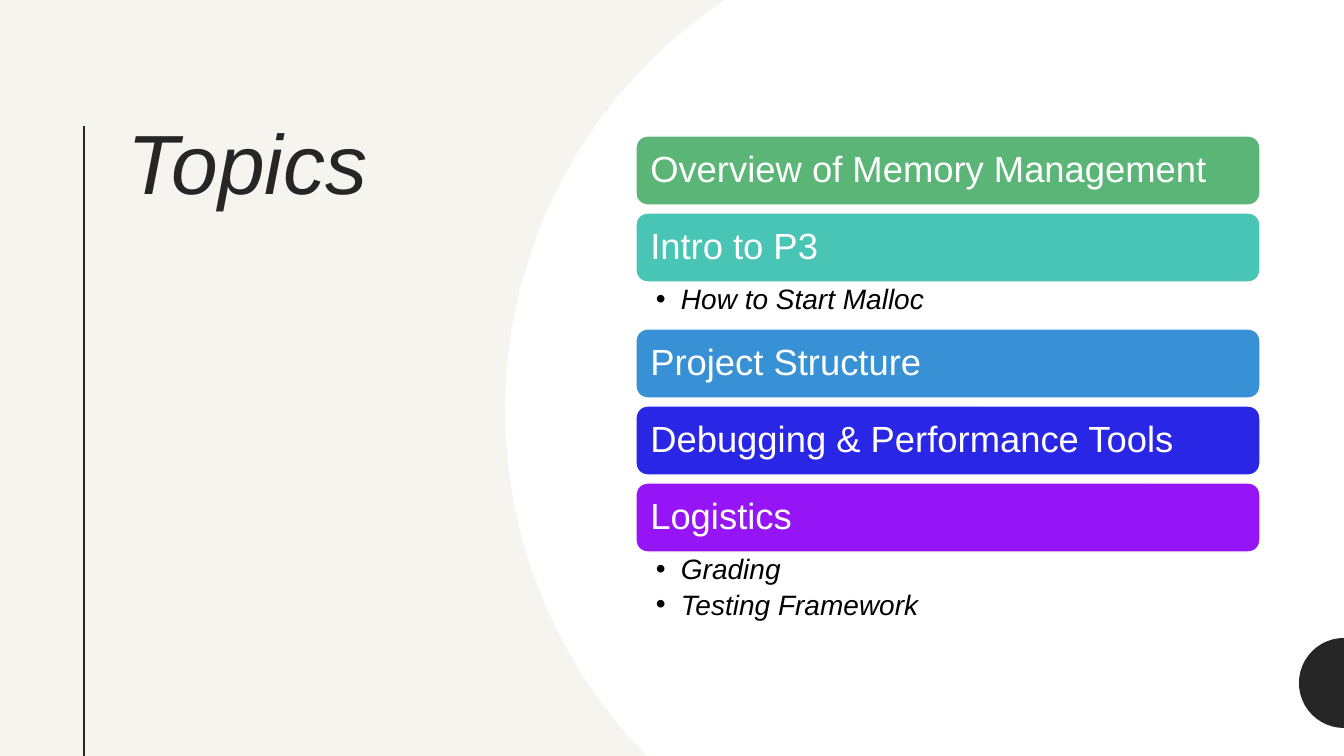
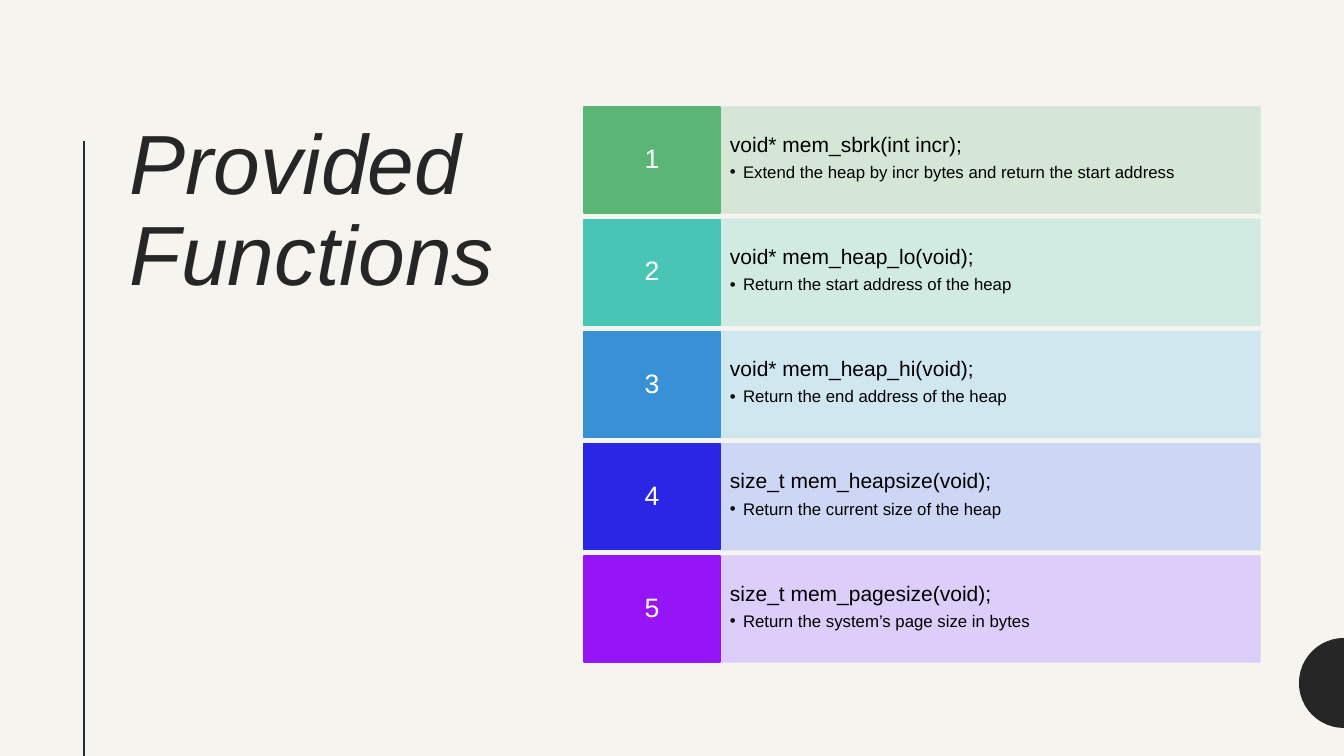
from math import asin, cos, sin

from lxml.etree import SubElement
from pptx import Presentation
from pptx.dml.color import RGBColor
from pptx.enum.shapes import MSO_CONNECTOR, MSO_SHAPE
from pptx.enum.text import MSO_ANCHOR, PP_ALIGN
from pptx.oxml.ns import qn
from pptx.util import Pt

SCALE = 914400 / 100.8
WIDE, HIGH = 1344, 756
FONT = "Arial"
HEX = {
    "paper": "F6F4EF", "white": "FFFFFF", "black": "000000",
    "ink": "262626", "navy": "232C41",
    "green": "5BB576", "teal": "49C5B5", "blue": "3890D5",
    "royal": "2926E6", "purple": "9615F6",
    "green pale": "D1E5D5", "teal pale": "CDEBE2", "blue pale": "CCE6F0",
    "royal pale": "CAD3F6", "purple pale": "D9CAFB",
}
HUES = ["green", "teal", "blue", "royal", "purple"]

TOPICS = [
    ("Overview of Memory Management", []),
    ("Intro to P3", ["How to Start Malloc"]),
    ("Project Structure", []),
    ("Debugging & Performance Tools", []),
    ("Logistics", ["Grading", "Testing Framework"]),
]
CALLS = [
    ("void* mem_sbrk(int incr);",
     "Extend the heap by incr bytes and return the start address"),
    ("void* mem_heap_lo(void);", "Return the start address of the heap"),
    ("void* mem_heap_hi(void);", "Return the end address of the heap"),
    ("size_t mem_heapsize(void);", "Return the current size of the heap"),
    ("size_t mem_pagesize(void);", "Return the system’s page size in bytes"),
]


def px(num):
    return round(num * SCALE)


def rgb(name):
    return RGBColor.from_string(HEX[name])


def paint(shape, fill, line=None):
    shape.shadow.inherit = False
    shape.fill.solid()
    shape.fill.fore_color.rgb = rgb(fill)
    if line:
        shape.line.color.rgb = rgb(line)
        shape.line.width = Pt(1)
    else:
        shape.line.fill.background()


def block(slide, box, fill, line, kind=MSO_SHAPE.RECTANGLE):
    shape = slide.shapes.add_shape(kind, *map(px, box))
    paint(shape, fill, line)
    return shape


def label(slide, box):
    return slide.shapes.add_textbox(*map(px, box))


def frame(shape, side, edge, anchor=MSO_ANCHOR.TOP):
    """Set wrap, insets and anchor; return the text frame."""
    text = shape.text_frame
    text.word_wrap = True
    text.margin_left = text.margin_right = px(side)
    text.margin_top = text.margin_bottom = px(edge)
    text.vertical_anchor = anchor
    return text


def style(para, size, tint, slant=False, align=PP_ALIGN.LEFT):
    para.alignment = align
    para.line_spacing = 0.9
    for run in para.runs:
        font = run.font
        font.name, font.size, font.italic = FONT, Pt(size), slant
        font.color.rgb = rgb(tint)


def bullet(para, indent, before=0):
    para.space_before = Pt(before)
    props = para._p.get_or_add_pPr()
    props.set("marL", str(px(indent)))
    props.set("indent", str(-px(indent)))
    tint = SubElement(props, qn("a:buClr"))
    SubElement(tint, qn("a:srgbClr")).set("val", HEX["black"])
    SubElement(props, qn("a:buFont")).set("typeface", FONT)
    SubElement(props, qn("a:buChar")).set("char", "•")


def fade(shape, percent):
    for tint in shape._element.spPr.iter(qn("a:srgbClr")):
        SubElement(tint, qn("a:alpha")).set("val", str(percent * 1000))


def dome(slide, mid_x, mid_y, radius, top, base, fill):
    """Draw a disc's left arc from top to base, filled to the slide's right edge."""
    start, end = (asin((y - mid_y) / radius) for y in (top, base))
    steps = 24
    turns = [start + (end - start) * i / steps for i in range(steps + 1)]
    dots = [(px(mid_x - radius * cos(t)), px(mid_y + radius * sin(t))) for t in turns]
    if mid_x < WIDE:
        dots += [(px(WIDE), px(base)), (px(WIDE), px(top))]
    path = slide.shapes.build_freeform(*dots[0], scale=1.0)
    path.add_line_segments(dots[1:], close=True)
    paint(path.convert_to_shape(), fill)


def rule(slide, top, tint):
    line = slide.shapes.add_connector(
        MSO_CONNECTOR.STRAIGHT, px(84), px(top), px(84), px(HIGH))
    line.line.color.rgb = rgb(tint)
    line.line.width = Pt(1.5)
    SubElement(line._element.spPr, qn("a:effectLst"))


def base(deck, title, left, width, top, tint, bulge=False):
    """Add a slide with the shared ground, title, rule and edge disc."""
    slide = deck.slides.add_slide(deck.slide_layouts[6])
    slide.background.fill.solid()
    slide.background.fill.fore_color.rgb = rgb("paper")
    text = frame(label(slide, (left, 117, width, 530)), 10, 5)
    text.text = title
    style(text.paragraphs[0], 60, "ink", slant=True)
    rule(slide, top, tint)
    if bulge:
        dome(slide, 997, 410, 492, 0, HIGH, "white")
    dome(slide, WIDE, 683, 45, 638, 728, "ink")
    return slide


def topics(slide, left, top, width):
    high, gap = 69, 8
    for hue, (head, subs) in zip(HUES, TOPICS):
        bar = block(slide, (left, top, width, high), hue, "white",
                    MSO_SHAPE.ROUNDED_RECTANGLE)
        text = frame(bar, 11, 11, MSO_ANCHOR.MIDDLE)
        text.text = head
        style(text.paragraphs[0], 26, "white")
        top += high
        if not subs:
            top += gap
            continue
        depth = 19 + 28 * len(subs)
        text = frame(label(slide, (left, top, width, depth)), 20, 3)
        text.text = "\n".join(subs)
        for i, para in enumerate(text.paragraphs):
            style(para, 20, "black", slant=True)
            bullet(para, 25, 4 if i else 0)
        top += depth


def calls(slide, left, top, width, depth):
    high, key = 106, 136
    pitch = (depth - high) / (len(CALLS) - 1)
    for i, (hue, (head, note)) in enumerate(zip(HUES, CALLS)):
        y = top + i * pitch
        pale = hue + " pale"
        body = block(slide, (left + key, y, width - key, high), pale, pale)
        fade(body, 89)
        text = frame(body, 10, 27)
        text.text = head + "\n" + note
        first, second = text.paragraphs
        style(first, 15, "black")
        style(second, 12, "black")
        bullet(second, 13, 5.2)

        tile = block(slide, (left, y, key, high), hue, hue)
        text = frame(tile, 7, 10, MSO_ANCHOR.MIDDLE)
        text.text = str(i + 1)
        style(text.paragraphs[0], 19, "white", align=PP_ALIGN.CENTER)


def main():
    deck = Presentation()
    deck.slide_width, deck.slide_height = px(WIDE), px(HIGH)

    slide = base(deck, "Topics", 118, 344, 126, "ink", bulge=True)
    topics(slide, 636, 136, 624)

    slide = base(deck, "Provided Functions", 120, 394, 141, "navy")
    calls(slide, 584, 107, 676, 555)

    deck.save("out.pptx")


if __name__ == "__main__":
    main()
